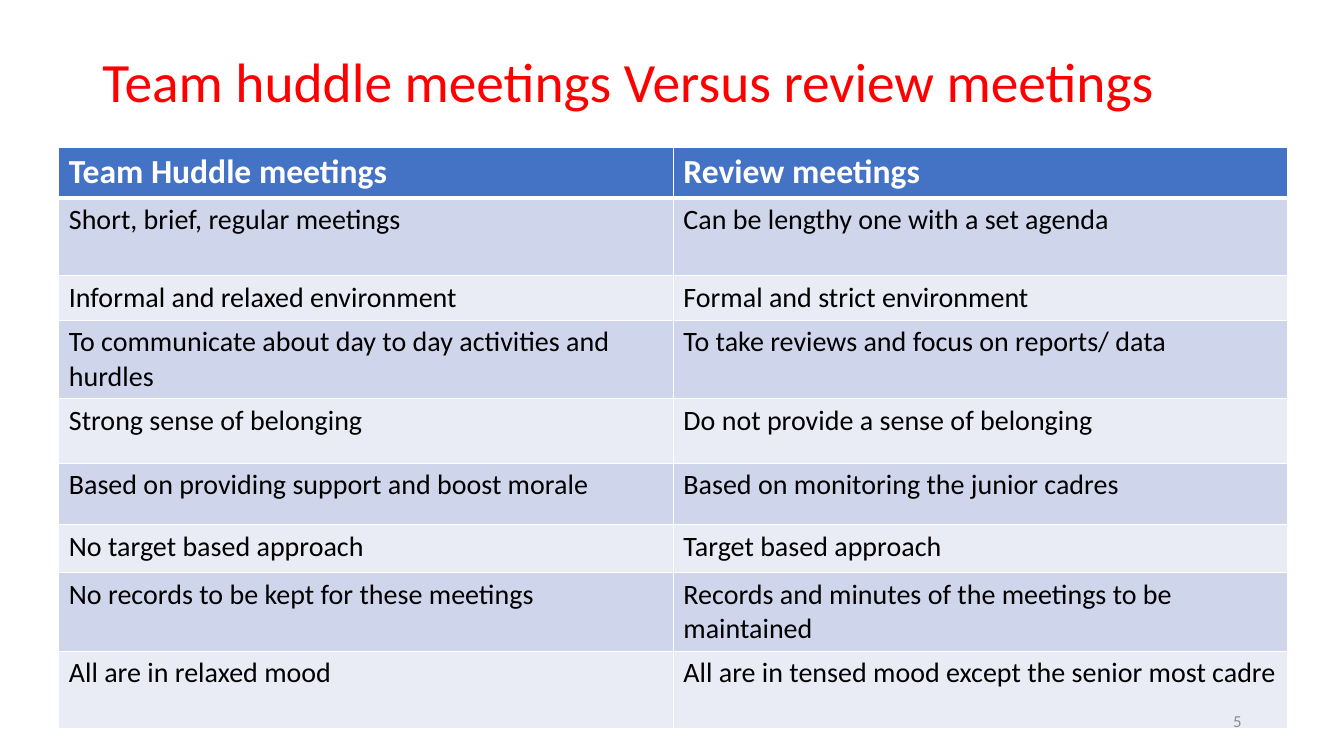
from lxml import etree
from pptx import Presentation
from pptx.dml.color import RGBColor
from pptx.enum import text
from pptx.oxml import ns
from pptx.util import Pt

FONT = "Calibri"
WHITE, BLACK, RED, GREY = "FFFFFF", "000000", "FF0000", "8C8C8C"
HEADER_FILL = "4472C4"
BAND_FILLS = ["E9EBF5", "CFD5EA"]

COMPARISON = [
    ("Team Huddle meetings", "Review meetings"),
    ("Short, brief, regular meetings", "Can be lengthy one with a set agenda"),
    ("Informal and relaxed environment", "Formal and strict environment"),
    ("To communicate about day to day activities and hurdles",
     "To take reviews and focus on reports/ data"),
    ("Strong sense of belonging", "Do not provide a sense of belonging"),
    ("Based on providing support and boost morale",
     "Based on monitoring the junior cadres"),
    ("No target based approach", "Target based approach"),
    ("No records to be kept for these meetings",
     "Records and minutes of the meetings to be maintained"),
    ("All are in relaxed mood",
     "All are in tensed mood except the senior most cadre"),
]
ROW_HEIGHTS = [36, 55.5, 31.5, 55.5, 46, 44, 34, 55.5, 55.5]


def color(hex_string):
    return RGBColor.from_string(hex_string)


def write(text_frame, words, size, hex_string, bold=False):
    text_frame.text = words
    paragraph = text_frame.paragraphs[0]
    font = paragraph.runs[0].font
    font.name, font.size, font.bold = FONT, Pt(size), bold
    font.color.rgb = color(hex_string)
    return paragraph


def add_cell_border(cell, side, width):
    properties = cell._tc.get_or_add_tcPr()
    line = etree.SubElement(properties, ns.qn(f"a:ln{side}"), w=str(Pt(width)))
    fill = etree.SubElement(line, ns.qn("a:solidFill"))
    etree.SubElement(fill, ns.qn("a:srgbClr"), val=WHITE)


def place_title(slide, left, top, width, height):
    title = slide.shapes.title
    title.left, title.top = Pt(left), Pt(top)
    title.width, title.height = Pt(width), Pt(height)
    frame = title.text_frame
    paragraph = write(frame, "Team huddle meetings Versus review meetings", 39.6, RED)
    paragraph.alignment = text.PP_ALIGN.LEFT
    paragraph.line_spacing = 0.9
    frame.word_wrap = True
    frame.auto_size = text.MSO_AUTO_SIZE.NONE
    frame.vertical_anchor = text.MSO_ANCHOR.MIDDLE


def add_comparison_table(slide, left, top, width):
    table = slide.shapes.add_table(
        len(COMPARISON), 2, Pt(left), Pt(top), Pt(width), Pt(sum(ROW_HEIGHTS))).table
    for column in table.columns:
        column.width = Pt(width / 2)
    for row_index, entries in enumerate(COMPARISON):
        is_header = row_index == 0
        table.rows[row_index].height = Pt(ROW_HEIGHTS[row_index])
        for column_index, words in enumerate(entries):
            cell = table.cell(row_index, column_index)
            write(cell.text_frame, words, 24 if is_header else 20,
                  WHITE if is_header else BLACK, is_header)
            # Borders come before the fill; the header rule is thicker
            for side in "LRTB":
                under_header = (row_index, side) in [(0, "B"), (1, "T")]
                add_cell_border(cell, side, 3 if under_header else 1)
            cell.fill.solid()
            cell.fill.fore_color.rgb = color(
                HEADER_FILL if is_header else BAND_FILLS[row_index % 2])


def add_page_number(slide, left, top, width, height):
    box = slide.shapes.add_textbox(Pt(left), Pt(top), Pt(width), Pt(height))
    frame = box.text_frame
    frame.word_wrap = True
    frame.vertical_anchor = text.MSO_ANCHOR.MIDDLE
    write(frame, "5", 12, GREY).alignment = text.PP_ALIGN.RIGHT


def main():
    presentation = Presentation()
    presentation.slide_width, presentation.slide_height = Pt(960), Pt(540)
    slide = presentation.slides.add_slide(presentation.slide_layouts[5])

    # Title, table and page number, from top to bottom
    place_title(slide, 66, 22.5, 828, 76)
    add_comparison_table(slide, 42, 105, 878)
    add_page_number(slide, 678, 500.5, 216, 28.75)

    presentation.save("out.pptx")


if __name__ == "__main__":
    main()
